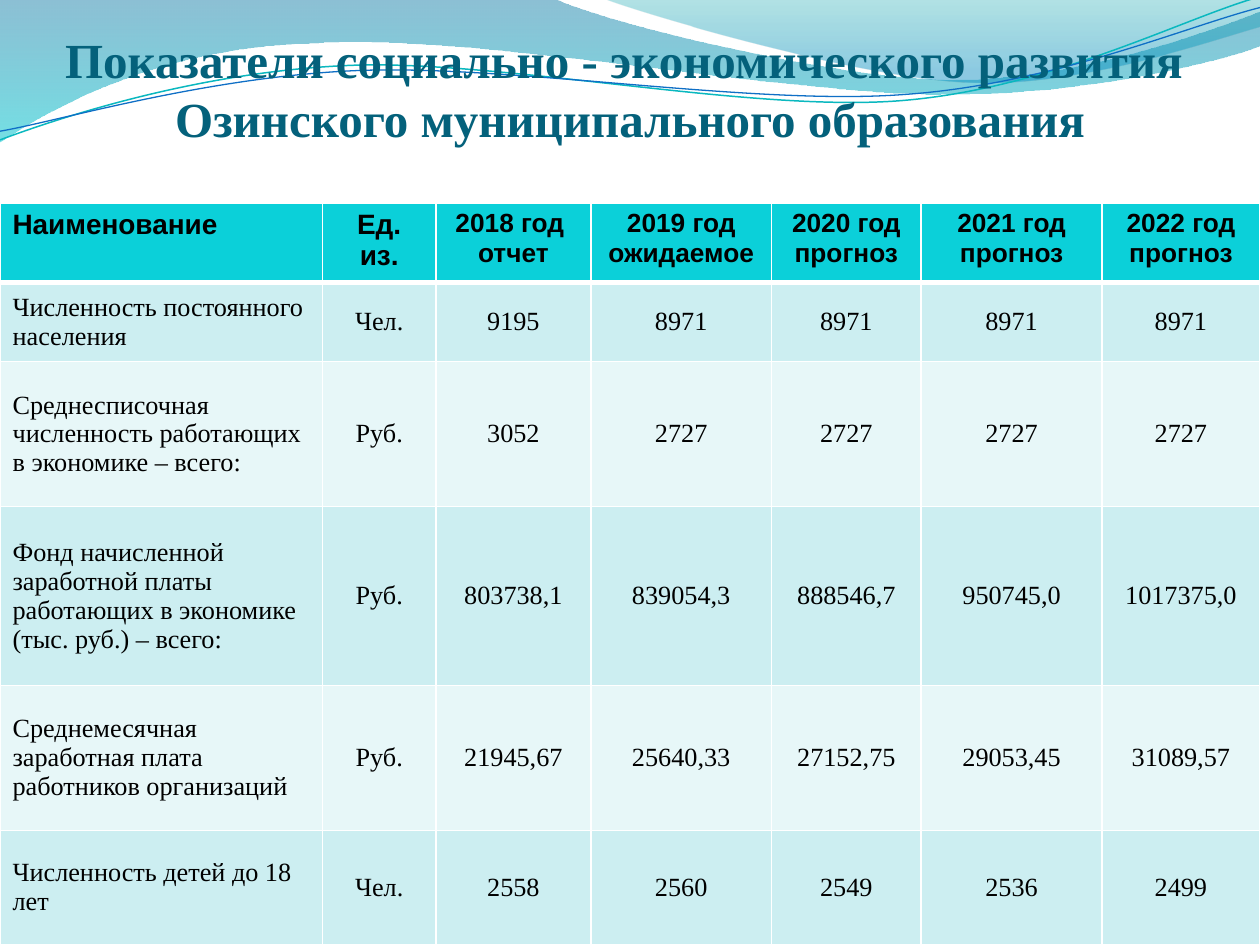
from dataclasses import dataclass

from lxml import etree
from pptx import Presentation
from pptx.dml.color import RGBColor
from pptx.enum.text import MSO_ANCHOR, MSO_AUTO_SIZE, PP_ALIGN
from pptx.oxml.ns import qn
from pptx.shapes.autoshape import Shape
from pptx.slide import Slide
from pptx.table import _Cell
from pptx.util import Pt

CENTER, LEFT = PP_ALIGN.CENTER, PP_ALIGN.LEFT
TOP, MIDDLE, BOTTOM = MSO_ANCHOR.TOP, MSO_ANCHOR.MIDDLE, MSO_ANCHOR.BOTTOM
NO_AUTOFIT = MSO_AUTO_SIZE.NONE
TITLE_ONLY_LAYOUT = 5
LINE_ROTATION = 357.3

COLORS = {
    "title": "04617B", "text": "000000", "border": "FFFFFF",
    "header": "0BD0D9", "odd_row": "CCEEF1", "even_row": "E7F7F8",
    "teal_line": "0AB8BF", "blue_line": "0F6FC6",
    "wave_top": "0074A1", "wave_bottom": "00C6CF",
    "corner_top": "00A1A9", "corner_bottom": "008BBF",
}


@dataclass
class GradientStop:
    position: float
    color: str
    opacity: int


@dataclass
class Wave:
    """Start point, then straight (x, y) or cubic (x1, y1, x2, y2, x, y) steps."""
    start: tuple[float, float]
    steps: list[tuple[float, ...]]
    gradient: tuple[GradientStop, ...] = ()
    line_color: str = ""
    line_width: float = 0


FILLED_WAVES = [
    Wave((0, 0), [
        (316.8, -0.7),
        (342.7, 12.2, 478.1, 45.4, 545.8, 45.4),
        (614.2, 45.4, 689.8, 18.7, 720, 6.5),
        (720.7, 25.9),
        (707.8, 31.7, 626.4, 54.7, 537.1, 54),
        (447.8, 54, 275, 20.2, 185, 24.5),
        (92.9, 25.9, 33.1, 59.8, -0.7, 81.4),
        (0, 0),
    ], gradient=(GradientStop(0, "wave_top", 45), GradientStop(1, "wave_bottom", 55))),
    Wave((344.9, -0.7), [
        (366.5, 7.9, 491, 44.6, 553.7, 46.8),
        (616.3, 49.7, 691.9, 23, 720, 15.1),
        (720, 0),
        (344.9, -0.7),
    ], gradient=(GradientStop(0, "corner_top", 30), GradientStop(0.8, "corner_bottom", 45))),
]
LINE_WAVES = [
    Wave((-1.4, 63), [
        (33.8, 51.7, 114.1, 29.4, 199.8, 29.9),
        (284.8, 30.3, 425.8, 67.3, 512.4, 64.9),
        (599, 62.4, 676.5, 25.7, 720.2, 15.5),
    ], line_color="teal_line", line_width=0.85),
    Wave((-1.1, 58), [
        (32.9, 53.8, 118.3, 32.5, 204.1, 33),
        (290.6, 33.4, 428.9, 63.8, 515.5, 61.4),
        (601.3, 59.6, 678.5, 30.1, 721.4, 21.3),
    ], line_color="blue_line", line_width=0.75),
]

TITLE_LINES = ["Показатели социально - экономического развития ",
               "Озинского муниципального образования"]
HEADERS = ["Наименование", "Ед. из.", "2018 год  отчет", "2019 год ожидаемое",
           "2020 год прогноз", "2021 год\nпрогноз", "2022 год прогноз"]
INDICATORS = [
    ["Численность постоянного населения", "Чел.",
     "9195", "8971", "8971", "8971", "8971"],
    ["Среднесписочная численность работающих в экономике – всего:", "Руб.",
     "3052", "2727", "2727", "2727", "2727"],
    ["Фонд начисленной заработной платы работающих в экономике (тыс. руб.) – всего:",
     "Руб.", "803738,1", "839054,3", "888546,7", "950745,0", "1017375,0"],
    ["Среднемесячная заработная плата работников организаций", "Руб.",
     "21945,67", "25640,33", "27152,75", "29053,45", "31089,57"],
    ["Численность детей до 18 лет", "Чел.",
     "2558", "2560", "2549", "2536", "2499"],
]
COLUMN_WIDTHS = [184.3, 64.8, 88.6, 103.2, 85.6, 103.3, 90.2]
ROW_HEIGHTS = [45.4, 45.4, 82.8, 102.2, 82.8, 65.5]


def color(name: str) -> RGBColor:
    return RGBColor.from_string(COLORS[name])


def bend_segments(shape: Shape, steps: list[tuple[float, ...]]) -> None:
    """Turn each three segments that hold a cubic step into one curve."""
    segments = iter(shape.element.spPr.findall(".//" + qn("a:lnTo")))
    for step in steps:
        first = next(segments)
        if len(step) == 2:
            continue
        curve = etree.Element(qn("a:cubicBezTo"))
        first.addprevious(curve)
        for segment in (first, next(segments), next(segments)):
            curve.append(segment[0])
            segment.getparent().remove(segment)


def fill_gradient(shape: Shape, stops: tuple[GradientStop, ...]) -> None:
    shape.fill.gradient()
    shape.fill.gradient_angle = 270
    for target, stop in zip(shape.fill.gradient_stops, stops):
        target.position = stop.position
        target.color.rgb = color(stop.color)
    tints = shape.element.spPr.findall(".//" + qn("a:gs") + "/" + qn("a:srgbClr"))
    for tint, stop in zip(tints, stops):
        etree.SubElement(tint, qn("a:alpha"), val=str(stop.opacity * 1000))


def draw_wave(slide: Slide, wave: Wave) -> Shape:
    points = [(Pt(step[index]), Pt(step[index + 1]))
              for step in wave.steps for index in range(0, len(step), 2)]
    builder = slide.shapes.build_freeform(Pt(wave.start[0]), Pt(wave.start[1]))
    builder.add_line_segments(points, close=bool(wave.gradient))
    shape = builder.convert_to_shape()
    bend_segments(shape, wave.steps)
    shape.shadow.inherit = False
    if wave.gradient:
        fill_gradient(shape, wave.gradient)
        shape.line.fill.background()
    else:
        shape.rotation = LINE_ROTATION
        shape.fill.background()
        shape.line.color.rgb = color(wave.line_color)
        shape.line.width = Pt(wave.line_width)
    return shape


def write_title(title: Shape) -> None:
    title.left, title.top, title.width, title.height = Pt(36), Pt(0), Pt(648), Pt(84.2)
    frame = title.text_frame
    frame.auto_size = NO_AUTOFIT
    frame.word_wrap = True
    frame.vertical_anchor = BOTTOM
    frame.margin_left = frame.margin_right = frame.margin_bottom = Pt(0)
    paragraph = frame.paragraphs[0]
    paragraph.alignment = CENTER
    for index, line in enumerate(TITLE_LINES):
        if index:
            paragraph.add_line_break()
        run = paragraph.add_run()
        run.text = line
        run.font.name, run.font.size, run.font.bold = "Times New Roman", Pt(28), True
        run.font.color.rgb = color("title")


def set_borders(cell: _Cell, row: int) -> None:
    properties = cell._tc.get_or_add_tcPr()
    widths = {"lnL": 1, "lnR": 1, "lnT": 3 if row == 1 else 1, "lnB": 3 if row == 0 else 1}
    for side, width in widths.items():
        line = etree.SubElement(properties, qn("a:" + side), w=str(Pt(width)))
        fill = etree.SubElement(line, qn("a:solidFill"))
        etree.SubElement(fill, qn("a:srgbClr"), val=COLORS["border"])


def set_margins(cell: _Cell, row: int, column: int) -> None:
    if row in (3, 4) and column >= 4:
        side, edge = 2.9, 5
    elif row == 5 and column >= 2:
        side, edge = 5, 0
    else:
        return
    cell.margin_left = cell.margin_right = Pt(side)
    cell.margin_top = cell.margin_bottom = Pt(edge)


def write_cell(cell: _Cell, text: str, row: int, column: int) -> None:
    is_header = row == 0
    set_borders(cell, row)
    set_margins(cell, row, column)
    cell.fill.solid()
    cell.fill.fore_color.rgb = color(
        "header" if is_header else "odd_row" if row % 2 else "even_row")
    cell.vertical_anchor = TOP if is_header else MIDDLE
    frame = cell.text_frame
    for index, line in enumerate(text.split("\n")):
        paragraph = frame.add_paragraph() if index else frame.paragraphs[0]
        paragraph.alignment = CENTER if column else LEFT
        run = paragraph.add_run()
        run.text = line
        run.font.name = "Arial" if is_header else "Times New Roman"
        run.font.size = Pt(16 if is_header and column < 2 else 15)
        run.font.bold = is_header
        run.font.color.rgb = color("text")


def add_indicator_table(slide: Slide) -> None:
    rows = [HEADERS, *INDICATORS]
    table = slide.shapes.add_table(
        len(rows), len(HEADERS), Pt(0), Pt(115.9),
        Pt(sum(COLUMN_WIDTHS)), Pt(sum(ROW_HEIGHTS))).table
    for column, width in zip(table.columns, COLUMN_WIDTHS):
        column.width = Pt(width)
    for row_index, (texts, height) in enumerate(zip(rows, ROW_HEIGHTS)):
        table.rows[row_index].height = Pt(height)
        for column_index, text in enumerate(texts):
            write_cell(table.cell(row_index, column_index), text, row_index, column_index)


def main() -> None:
    presentation = Presentation()
    presentation.slide_width, presentation.slide_height = Pt(720), Pt(540)
    slide = presentation.slides.add_slide(presentation.slide_layouts[TITLE_ONLY_LAYOUT])
    # Decorative waves, behind the title
    for wave in FILLED_WAVES:
        draw_wave(slide, wave)
    slide.shapes.add_group_shape([draw_wave(slide, wave) for wave in LINE_WAVES])
    # Title, raised above the waves
    title = slide.shapes.title
    write_title(title)
    slide.shapes.element.append(title.element)
    # Indicators by year
    add_indicator_table(slide)
    presentation.save("out.pptx")


if __name__ == "__main__":
    main()
